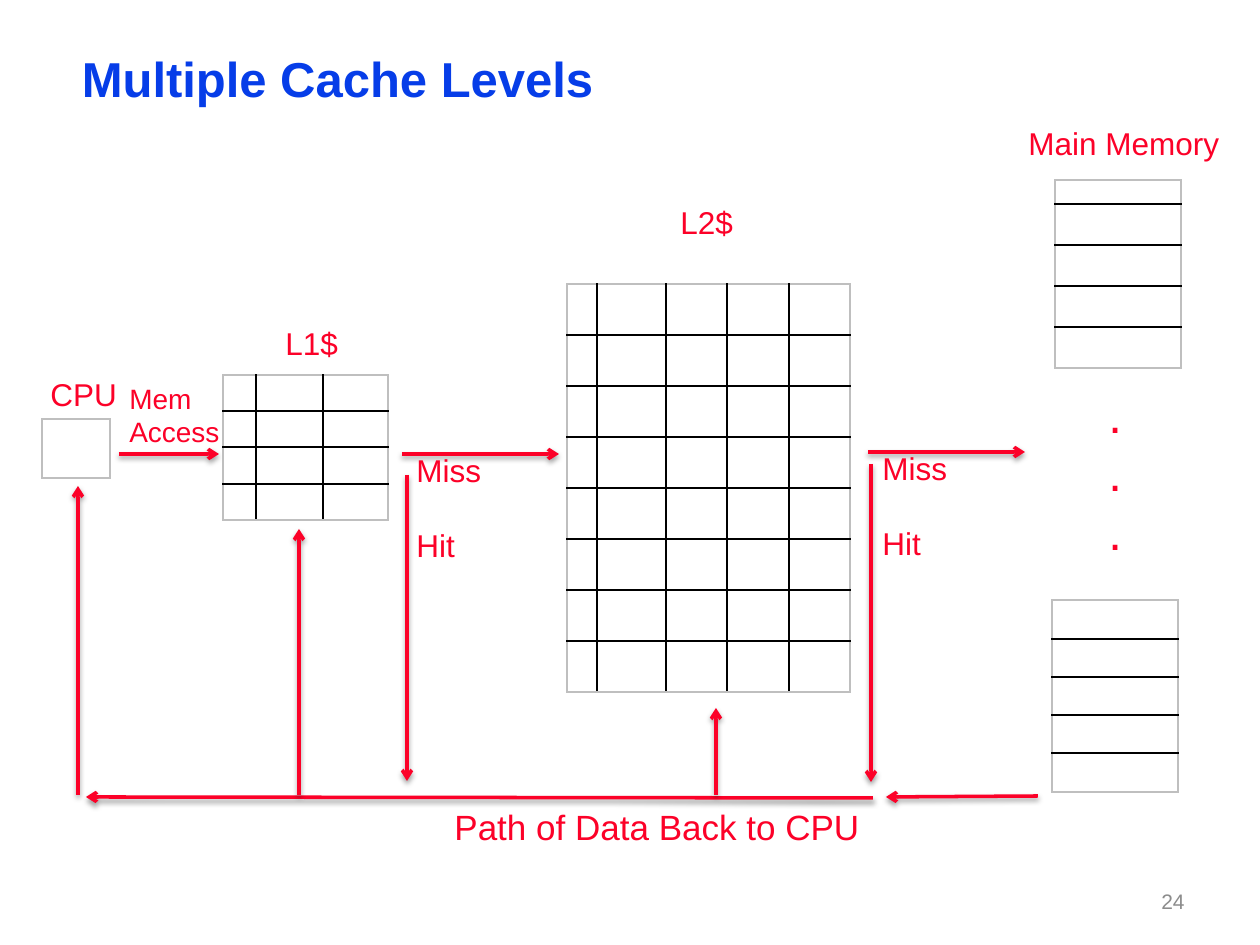
from lxml import etree
from pptx import Presentation
from pptx.dml.color import RGBColor
from pptx.enum.shapes import MSO_CONNECTOR
from pptx.enum.text import MSO_ANCHOR, PP_ALIGN
from pptx.oxml import parse_xml
from pptx.oxml.ns import nsdecls, qn
from pptx.util import Emu, Pt

STRAIGHT = MSO_CONNECTOR.STRAIGHT
TOP, MIDDLE = MSO_ANCHOR.TOP, MSO_ANCHOR.MIDDLE
LEFT, RIGHT = PP_ALIGN.LEFT, PP_ALIGN.RIGHT
BLUE = RGBColor(0x06, 0x3D, 0xE8)
RED = RGBColor(0xFC, 0x01, 0x28)
GRAY = RGBColor(0x8C, 0x8C, 0x8C)
BLACK = RGBColor(0x00, 0x00, 0x00)
SILVER = RGBColor(0xBF, 0xBF, 0xBF)
FONT = "Arial"
PX_PER_INCH = 126


def px(length):
    """Turn pixels into EMU."""
    return Emu(round(length * 914400 / PX_PER_INCH))


def add_label(page, box, text, size, color=RED, align=LEFT, anchor=TOP, gap=0):
    """Place text in a box, with a gap in points between paragraphs."""
    label = page.shapes.add_textbox(*map(px, box))
    frame = label.text_frame
    frame.word_wrap = True
    frame.vertical_anchor = anchor
    frame.text = text
    for index, para in enumerate(frame.paragraphs):
        para.alignment = align
        if index and gap:
            para.space_before = Pt(gap)
        for span in para.runs:
            span.font.name = FONT
            span.font.size = Pt(size)
            span.font.color.rgb = color
    return label


def add_arrow(page, start, end):
    """Draw a red arrow with a soft shadow."""
    arrow = page.shapes.add_connector(STRAIGHT, *map(px, start + end))
    arrow.line.color.rgb = RED
    arrow.line.width = Pt(2)
    head = etree.SubElement(arrow.line._get_or_add_ln(), qn("a:tailEnd"))
    head.set("type", "arrow")
    arrow._element.spPr.append(parse_xml(
        f'<a:effectLst {nsdecls("a")}><a:outerShdw blurRad="39370" dist="20320" '
        'dir="5400000" rotWithShape="0"><a:srgbClr val="000000">'
        '<a:alpha val="38000"/></a:srgbClr></a:outerShdw></a:effectLst>'))


def style_cell(cell, edges):
    """Empty a cell of fill and margins and draw its four borders."""
    cell.margin_left = cell.margin_right = cell.margin_top = cell.margin_bottom = 0
    properties = cell._tc.get_or_add_tcPr()
    for side, outer in edges.items():
        color = SILVER if outer else BLACK
        properties.append(parse_xml(
            f'<a:ln{side} {nsdecls("a")} w="12700"><a:solidFill>'
            f'<a:srgbClr val="{color}"/></a:solidFill></a:ln{side}>'))
    cell.fill.background()
    para = cell.text_frame.paragraphs[0]
    etree.SubElement(para._p, qn("a:endParaRPr")).set("sz", "800")


def add_grid(page, left, top, widths, heights):
    """Draw an empty table with black rules and a silver frame."""
    table = page.shapes.add_table(
        len(heights), len(widths), px(left), px(top), px(sum(widths)), px(sum(heights))).table
    table.first_row = table.horz_banding = False
    for column, width in zip(table.columns, widths):
        column.width = px(width)
    for row, height in zip(table.rows, heights):
        row.height = px(height)
    for y in range(len(heights)):
        for x in range(len(widths)):
            style_cell(table.cell(y, x), {
                "L": x == 0, "R": x == len(widths) - 1,
                "T": y == 0, "B": y == len(heights) - 1})


def add_header(page, box):
    """Place the slide title."""
    title = add_label(page, box, "Multiple Cache Levels", 28, BLUE)
    frame = title.text_frame
    frame.margin_left = frame.margin_right = px(9)
    frame.margin_top = frame.margin_bottom = px(4)
    frame.paragraphs[0].line_spacing = 0.87
    frame.paragraphs[0].runs[0].font.bold = True


def add_cpu(page, box):
    """Place the processor and its memory access arrow."""
    left, top, width, height = box
    add_grid(page, left, top, [width], [height])
    add_label(page, (left - 4, top - 50, 95, 50), "CPU", 18)
    add_label(page, (left + 75, top - 44, 121, 81), "Mem\nAccess", 16)
    add_arrow(page, (left + 77, top + 35), (left + 177, top + 35))


def add_cache(page, left, top, name, label_offset, widths, heights):
    """Place a cache grid with its name above."""
    add_grid(page, left, top, widths, heights)
    across, up = label_offset
    add_label(page, (left + across, top - up, 84, 50), name, 18)


def add_outcome(page, left, top, drop, bottom):
    """Place the miss arrow, the hit arrow and their words."""
    add_arrow(page, (left, top), (left + 157, top))
    add_arrow(page, drop, (drop[0], bottom))
    add_label(page, (left + 2, top - 9, 113, 110), "Miss\nHit", 18, gap=21)


def add_memory(page, left, top):
    """Place both ends of main memory with dots between."""
    add_grid(page, left, top, [126], [24] + [41] * 4)
    add_grid(page, left - 3, top + 420, [126], [39, 38, 38, 38, 39])
    add_label(page, (left - 39, top - 62, 223, 50), "Main Memory", 18)
    add_label(page, (left + 41, top + 198, 66, 190), ".\n.\n.", 28)


def add_return_path(page, left, base):
    """Place the data path that leads back to each level."""
    add_arrow(page, (left + 958, base - 1), (left + 806, base))
    add_arrow(page, (left + 793, base + 1), (left + 6, base))
    for x, y in ((-2, 486), (219, 529), (636, 708)):
        add_arrow(page, (left + x, base - 2), (left + x, y))
    add_label(page, (left + 362, base + 2, 473, 55), "Path of Data Back to CPU", 20)


def main():
    """Build the cache levels slide."""
    deck = Presentation()
    deck.slide_width, deck.slide_height = px(1260), px(945)
    page = deck.slides.add_slide(deck.slide_layouts[6])
    add_header(page, (73, 53, 1124, 58))
    add_cpu(page, (42, 419, 68, 59))
    add_cache(page, 223, 375, "L1$", (50, 57), [33, 67, 65], [36, 36, 37, 36])
    add_cache(page, 567, 284, "L2$", (101, 87), [30, 69, 61, 62, 61], [51] * 8)
    add_memory(page, 1055, 180)
    add_outcome(page, 402, 454, (407, 475), 781)
    add_outcome(page, 868, 452, (871, 464), 782)
    add_return_path(page, 80, 797)
    add_label(page, (903, 876, 294, 50), "24", 12, GRAY, RIGHT, MIDDLE)
    deck.save("out.pptx")


if __name__ == "__main__":
    main()
